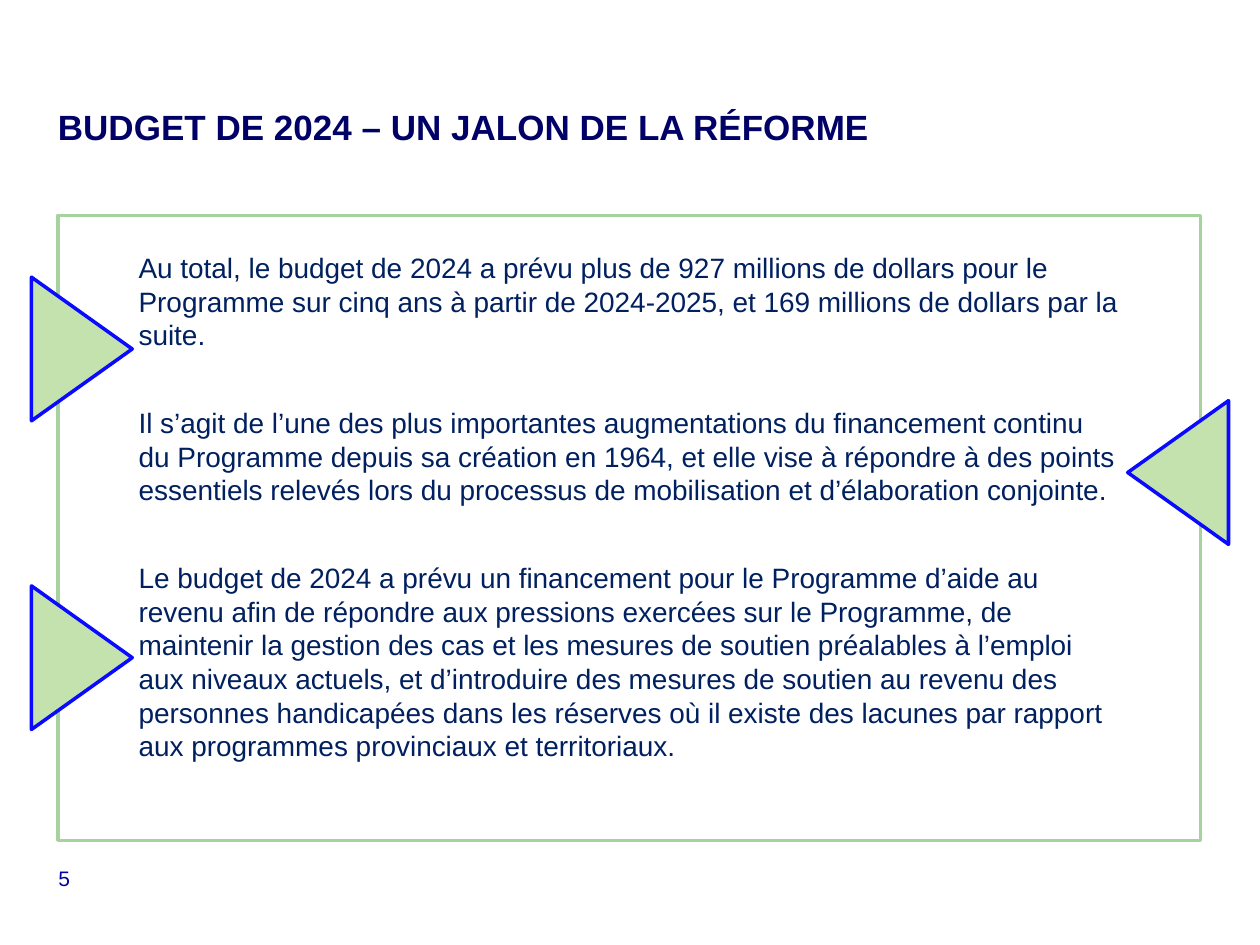
from pptx import Presentation
from pptx.dml.color import RGBColor
from pptx.enum.shapes import MSO_SHAPE as Shape
from pptx.enum.text import PP_ALIGN as Align
from pptx.util import Inches, Pt

NAVY = RGBColor(0x00, 0x00, 0x66)
INK = RGBColor(0x00, 0x20, 0x60)
BLUE = RGBColor(0x00, 0x00, 0xA3)
EDGE = RGBColor(0x0A, 0x0A, 0xFF)
GREEN = RGBColor(0xA6, 0xD3, 0x9D)
PALE = RGBColor(0xC4, 0xE2, 0xAE)

TITLE = "BUDGET DE 2024 – UN JALON DE LA RÉFORME"
BODY = [
    "Au total, le budget de 2024 a prévu plus de 927 millions de dollars pour le "
    "Programme sur cinq ans à partir de 2024-2025, et 169 millions de dollars par la suite.",
    "Il s’agit de l’une des plus importantes augmentations du financement continu "
    "du Programme depuis sa création en 1964, et elle vise à répondre à des points "
    "essentiels relevés lors du processus de mobilisation et d’élaboration conjointe.",
    "Le budget de 2024 a prévu un financement pour le Programme d’aide au revenu "
    "afin de répondre aux pressions exercées sur le Programme, de maintenir la gestion "
    "des cas et les mesures de soutien préalables à l’emploi aux niveaux actuels, et "
    "d’introduire des mesures de soutien au revenu des personnes handicapées dans les "
    "réserves où il existe des lacunes par rapport aux programmes provinciaux et "
    "territoriaux.",
]


class Deck:
    font = "Arial"
    width = Pt(2)

    def __init__(self, slide):
        self.slide = slide

    def text(self, box, lines, size, color, bold=False, lead=None, gap=0,
             align=Align.LEFT, inset=0):
        frame = self.slide.shapes.add_textbox(*map(Inches, box)).text_frame
        frame.word_wrap = True
        frame.margin_left = frame.margin_right = Inches(inset)
        frame.margin_top = frame.margin_bottom = Inches(inset / 2)
        frame.text = "\n".join(lines)
        for para in frame.paragraphs:
            para.alignment = align
            para.space_after = Pt(gap)
            if lead:
                para.line_spacing = Pt(lead)
            font = para.font
            font.name, font.size, font.bold = self.font, Pt(size), bold
            font.color.rgb = color

    def shape(self, kind, box, line, fill=None):
        item = self.slide.shapes.add_shape(kind, *map(Inches, box))
        item.shadow.inherit = False
        item.line.color.rgb = line
        item.line.width = self.width
        if fill is None:
            item.fill.background()
        else:
            item.fill.solid()
            item.fill.fore_color.rgb = fill
        return item

    def arrow(self, left, top, turn=0):
        item = self.shape(Shape.PENTAGON, (left, top, 0.8, 1.14), EDGE, PALE)
        item.adjustments[0] = 1
        item.rotation = turn


def main():
    show = Presentation()
    show.slide_width, show.slide_height = Inches(10), Inches(7.5)
    deck = Deck(show.slides.add_slide(show.slide_layouts[6]))

    deck.text((0.04, 6.82, 0.94, 0.3), ["5"], 12, BLUE, align=Align.CENTER, inset=0.1)
    deck.text((0.46, 0.84, 9.07, 0.64), [TITLE], 20, NAVY, bold=True, lead=24)
    deck.text((1.1, 1.99, 7.79, 3.88), BODY, 16, INK, lead=19.2, gap=31)
    deck.shape(Shape.RECTANGLE, (0.46, 1.71, 9.07, 4.96), GREEN)
    for left, top, turn in [(0.25, 2.2, 0), (0.25, 4.65, 0), (8.95, 3.18, 180)]:
        deck.arrow(left, top, turn)

    show.save("out.pptx")


if __name__ == "__main__":
    main()
